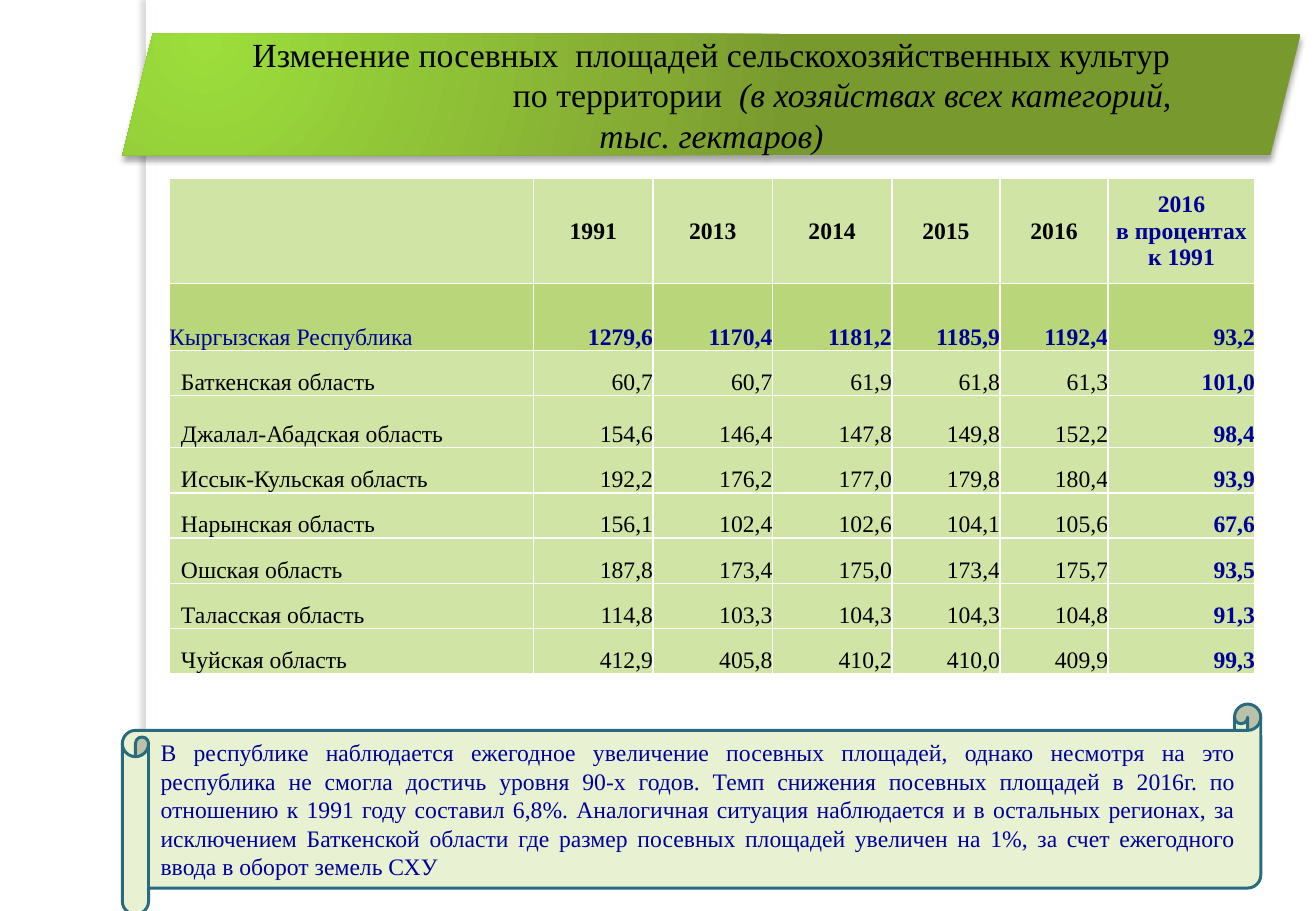
from dataclasses import dataclass

from lxml.etree import SubElement, fromstring
from pptx import Presentation
from pptx.dml.color import RGBColor
from pptx.enum.shapes import MSO_SHAPE as Shape
from pptx.enum.text import MSO_ANCHOR as Anchor, PP_ALIGN as Align
from pptx.oxml.ns import nsdecls, qn
from pptx.util import Pt

FONT = "Times New Roman"
BLACK = RGBColor(0x00, 0x00, 0x00)
WHITE = RGBColor(0xFF, 0xFF, 0xFF)
NAVY = RGBColor(0x00, 0x00, 0x99)
TEAL = RGBColor(0x29, 0x6B, 0x7C)
GREY = RGBColor(0x73, 0x6F, 0x63)
PALE_GREEN = RGBColor(0xE8, 0xF2, 0xD3)
LIGHT_GREEN = RGBColor(0xD0, 0xE4, 0xA6)
MID_GREEN = RGBColor(0xB9, 0xD7, 0x7A)
BANNER_STOPS = (
    (0, RGBColor(0x9C, 0xDE, 0x3B)),
    (76, RGBColor(0x84, 0xAA, 0x33)),
    (100, RGBColor(0x77, 0x99, 0x2E)),
)

COL_WIDTHS = (216, 70.8, 70.8, 70.8, 64.1, 64.1, 87)
ROW_HEIGHTS = (62.4, 39.6, 26.8, 30.8) + (26.8,) * 5
HEADERS = ("", "1991", "2013", "2014", "2015", "2016", "2016\nв процентах\nк 1991")
NOTE = (
    "В республике наблюдается ежегодное увеличение посевных площадей, однако "
    "несмотря на это республика не смогла достичь уровня 90-х годов. Темп снижения "
    "посевных площадей в 2016г. по отношению к 1991 году составил 6,8%. Аналогичная "
    "ситуация наблюдается и в остальных регионах, за исключением Баткенской области "
    "где размер посевных площадей увеличен на 1%, за счет ежегодного ввода в оборот "
    "земель СХУ"
)


@dataclass(frozen=True)
class Region:
    name: str
    values: str
    total: bool = False


REGIONS = (
    Region("Кыргызская Республика", "1279,6 1170,4 1181,2 1185,9 1192,4 93,2", True),
    Region("Баткенская область", "60,7 60,7 61,9 61,8 61,3 101,0"),
    Region("Джалал-Абадская область", "154,6 146,4 147,8 149,8 152,2 98,4"),
    Region("Иссык-Кульская область", "192,2 176,2 177,0 179,8 180,4 93,9"),
    Region("Нарынская область", "156,1 102,4 102,6 104,1 105,6 67,6"),
    Region("Ошская область", "187,8 173,4 175,0 173,4 175,7 93,5"),
    Region("Таласская область", "114,8 103,3 104,3 104,3 104,8 91,3"),
    Region("Чуйская область", "412,9 405,8 410,2 410,0 409,9 99,3"),
)


def write(p, text: str, *, size: float = 14, color: RGBColor = BLACK,
          bold: bool = False, italic: bool = False, align: Align = Align.LEFT) -> None:
    """Append a formatted run to a paragraph."""
    p.alignment = align
    r = p.add_run()
    r.text = text
    r.font.name, r.font.size = FONT, Pt(size)
    r.font.bold, r.font.italic = bold, italic
    r.font.color.rgb = color


def add_shape(slide, kind: Shape, left: float, top: float, width: float, height: float):
    """Add a preset shape without line or shadow, with text centred vertically."""
    sp = slide.shapes.add_shape(kind, Pt(left), Pt(top), Pt(width), Pt(height))
    sp.shadow.inherit = False
    sp.line.fill.background()
    sp.text_frame.word_wrap = True
    sp.text_frame.vertical_anchor = Anchor.MIDDLE
    return sp


def add_shadow(sp, color: RGBColor, alpha: int, angle: int) -> None:
    effects = sp._element.spPr.find(qn("a:effectLst"))
    shadow = SubElement(effects, qn("a:outerShdw"), blurRad=str(Pt(3)), dist=str(Pt(3)),
                        dir=str(angle * 60000), algn="ctr", rotWithShape="0")
    clr = SubElement(shadow, qn("a:srgbClr"), val=str(color))
    SubElement(clr, qn("a:alpha"), val=str(alpha * 1000))


def fill_radial(sp, stops: tuple) -> None:
    """Give a shape a circular gradient spreading from its upper left."""
    marks = "".join(f'<a:gs pos="{pos * 1000}"><a:srgbClr val="{color}"/></a:gs>'
                    for pos, color in stops)
    gradient = fromstring(
        f'<a:gradFill {nsdecls("a")} rotWithShape="1"><a:gsLst>{marks}</a:gsLst>'
        '<a:path path="circle"><a:fillToRect l="15000" t="15000" r="100000" b="100000"/>'
        '</a:path></a:gradFill>')
    sp._element.spPr.find(qn("a:prstGeom")).addnext(gradient)


def set_borders(cell, color: RGBColor, width: float) -> None:
    props = cell._tc.get_or_add_tcPr()
    for i, side in enumerate(("lnL", "lnR", "lnT", "lnB")):
        props.insert(i, fromstring(
            f'<a:{side} {nsdecls("a")} w="{Pt(width)}"><a:solidFill>'
            f'<a:srgbClr val="{color}"/></a:solidFill></a:{side}>'))


def fill_cell(cell, text: str, *, fill: RGBColor, anchor: Anchor = Anchor.BOTTOM,
              indent: float = 0, **style) -> None:
    cell.margin_left = Pt(indent)
    cell.margin_right = cell.margin_top = cell.margin_bottom = 0
    cell.vertical_anchor = anchor
    cell.fill.solid()
    cell.fill.fore_color.rgb = fill
    set_borders(cell, WHITE, 1)
    tf = cell.text_frame
    for i, line in enumerate(text.split("\n")):
        write(tf.add_paragraph() if i else tf.paragraphs[0], line, **style)


def add_side_strip(slide) -> None:
    sp = add_shape(slide, Shape.RECTANGLE, 86.4, 0, 6.5, 540)
    sp.fill.solid()
    sp.fill.fore_color.rgb = WHITE
    add_shadow(sp, GREY, 25, 180)


def add_banner(slide) -> None:
    sp = add_shape(slide, Shape.PARALLELOGRAM, 72.5, 20, 698.5, 72)
    fill_radial(sp, BANNER_STOPS)
    add_shadow(sp, BLACK, 35, 90)
    tf = sp.text_frame
    first, second, third = tf.paragraphs[0], tf.add_paragraph(), tf.add_paragraph()
    style = dict(size=20, align=Align.CENTER)
    write(first, "Изменение посевных  площадей сельскохозяйственных культур", **style)
    second._p.get_or_add_pPr().set("marL", str(Pt(155)))
    write(second, "по территории  ", **style)
    write(second, "(в хозяйствах всех категорий,", italic=True, **style)
    write(third, "тыс. гектаров)", italic=True, **style)


def add_area_table(slide) -> None:
    table = slide.shapes.add_table(
        len(ROW_HEIGHTS), len(COL_WIDTHS), Pt(100.3), Pt(105.8),
        Pt(sum(COL_WIDTHS)), Pt(sum(ROW_HEIGHTS))).table
    table.first_row = table.horz_banding = False
    for col, width in zip(table.columns, COL_WIDTHS):
        col.width = Pt(width)
    for row, height in zip(table.rows, ROW_HEIGHTS):
        row.height = Pt(height)

    last = len(COL_WIDTHS) - 1
    for c, text in enumerate(HEADERS):
        fill_cell(table.cell(0, c), text, fill=LIGHT_GREEN, anchor=Anchor.MIDDLE,
                  color=NAVY if c == last else BLACK, bold=True, align=Align.CENTER)
    for r, region in enumerate(REGIONS, 1):
        fill = MID_GREEN if region.total else LIGHT_GREEN
        fill_cell(table.cell(r, 0), region.name, fill=fill,
                  indent=0 if region.total else 7,
                  color=NAVY if region.total else BLACK)
        for c, value in enumerate(region.values.split(), 1):
            strong = region.total or c == last
            fill_cell(table.cell(r, c), value, fill=fill, bold=strong,
                      color=NAVY if strong else BLACK, align=Align.RIGHT)


def add_note_scroll(slide) -> None:
    sp = add_shape(slide, Shape.HORIZONTAL_SCROLL, 72.5, 417.4, 674.8, 124.6)
    sp.fill.solid()
    sp.fill.fore_color.rgb = PALE_GREEN
    sp.line.color.rgb = TEAL
    sp.line.width = Pt(1.75)
    write(sp.text_frame.paragraphs[0], NOTE, color=NAVY, align=Align.JUSTIFY)


def main() -> None:
    prs = Presentation()
    prs.slide_width, prs.slide_height = Pt(780), Pt(540)
    slide = prs.slides.add_slide(prs.slide_layouts[6])
    add_side_strip(slide)
    add_banner(slide)
    add_area_table(slide)
    add_note_scroll(slide)
    prs.save("out.pptx")


if __name__ == "__main__":
    main()
